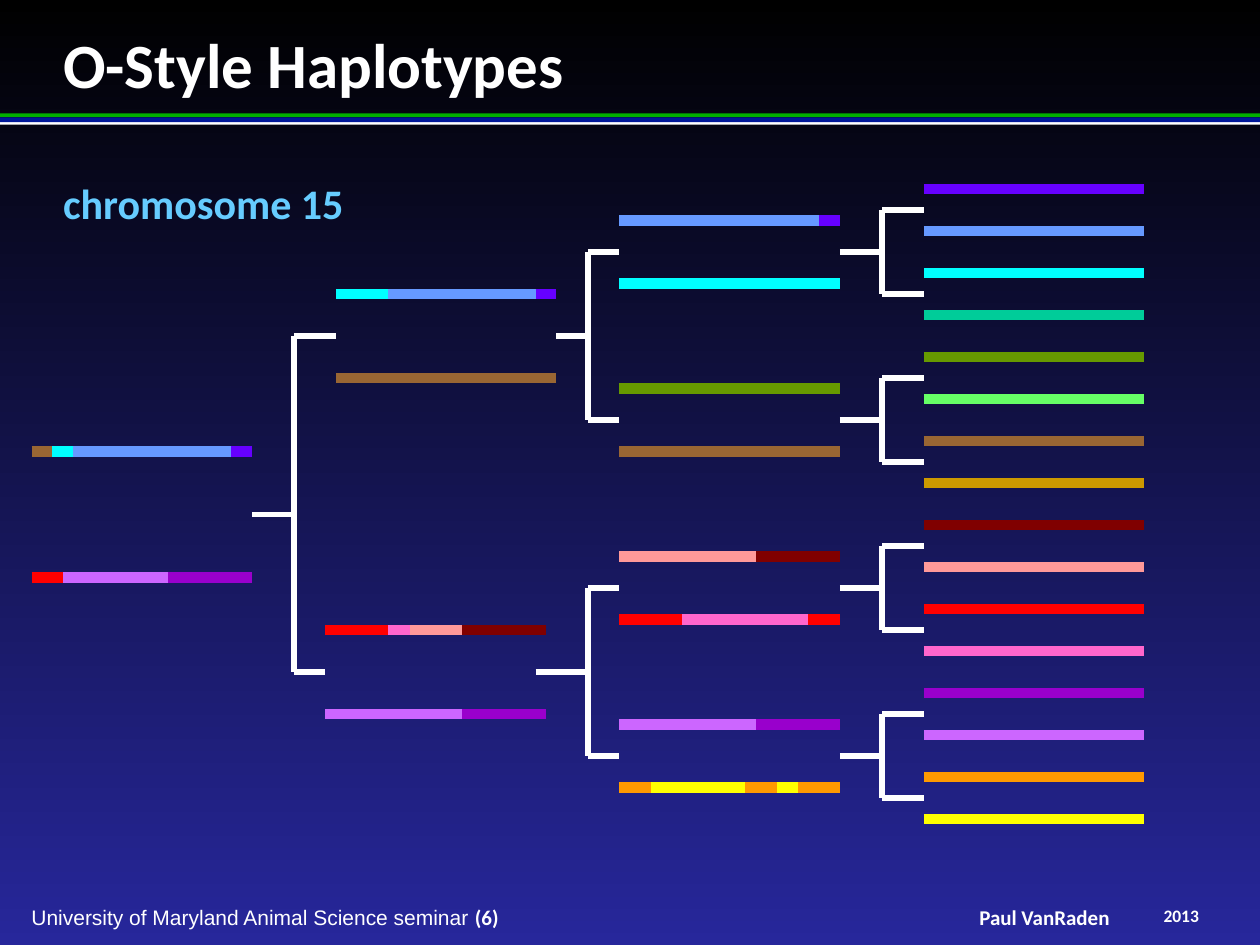
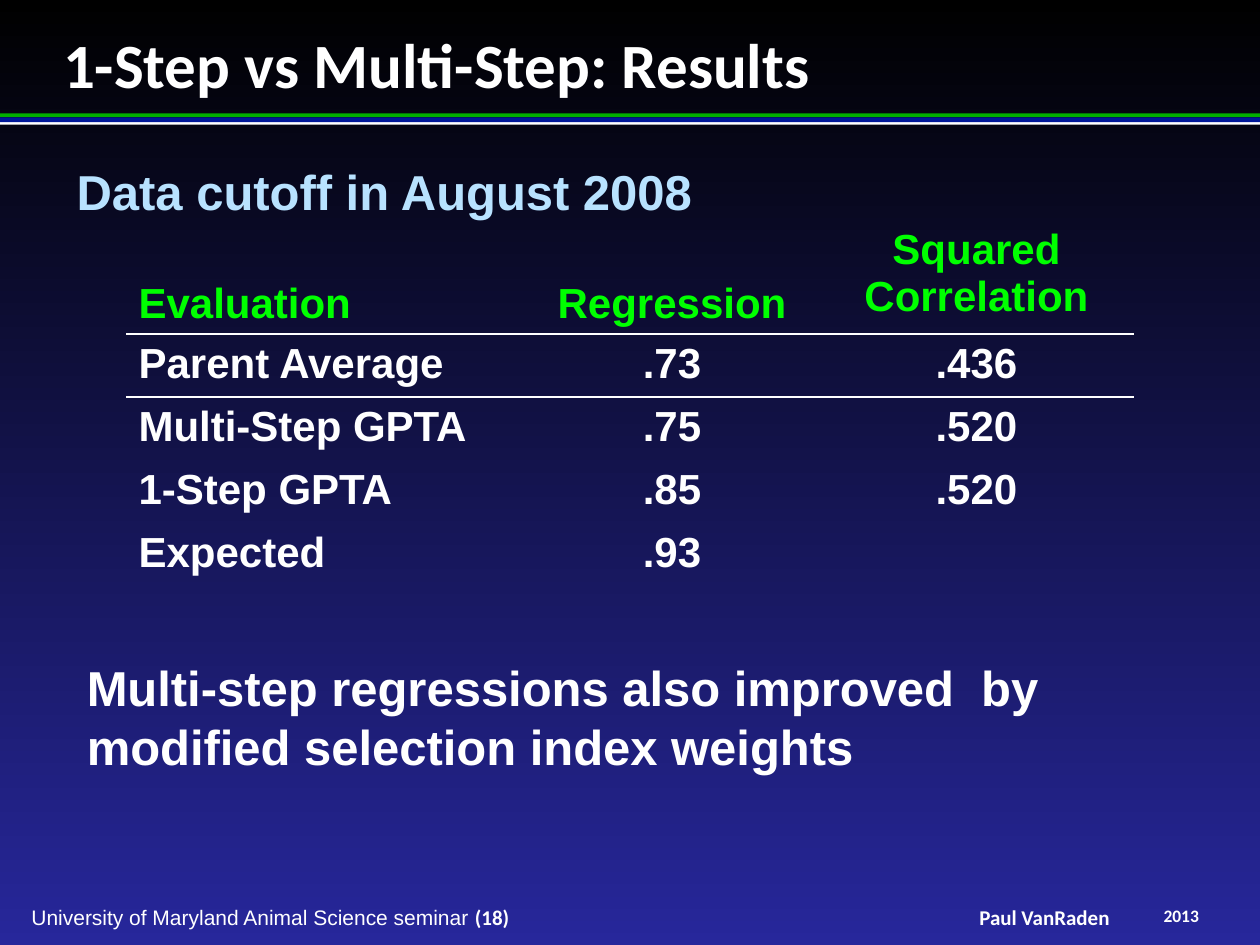
import pptx
import pptx.util
import pptx.dml.color
import pptx.enum.dml
import pptx.enum.shapes
import pptx.enum.text
import lxml.etree

Pt = pptx.util.Pt
rgb = pptx.dml.color.RGBColor.from_string
ALIGN = pptx.enum.text.PP_ALIGN
ANCHOR = pptx.enum.text.MSO_ANCHOR
DRAWING_NS = "http://schemas.openxmlformats.org/drawingml/2006/main"
NO_STYLE_NO_GRID = "{2D5ABB26-0587-4C30-8999-92F81FD0307C}"

WHITE = "FFFFFF"
LIME = "00FF00"
VIOLET, BLUE, CYAN, TEAL = "6600FF", "6699FF", "00FFFF", "00CC99"
OLIVE, GREEN, BROWN, OCHRE = "669900", "66FF66", "996633", "CC9900"
MAROON, SALMON, RED, PINK = "800000", "FF9999", "FF0000", "FF66CC"
PURPLE, ORCHID, ORANGE, YELLOW = "9900CC", "CC66FF", "FF9900", "FFFF00"


def style_text(frame, size, colour, font="Arial", bold=True, align=ALIGN.LEFT):
    for paragraph in frame.paragraphs:
        paragraph.alignment = align
        for span in paragraph.runs:
            span.font.size = Pt(size)
            span.font.name = font
            span.font.bold = bold
            span.font.color.rgb = rgb(colour)


def add_line(slide, x1, y1, x2, y2, colour, width):
    line = slide.shapes.add_connector(
        pptx.enum.shapes.MSO_CONNECTOR.STRAIGHT, Pt(x1), Pt(y1), Pt(x2), Pt(y2))
    line.line.color.rgb = rgb(colour)
    line.line.width = Pt(width)
    lxml.etree.SubElement(line._element.spPr, f"{{{DRAWING_NS}}}effectLst")


deck = pptx.Presentation()
deck.slide_width, deck.slide_height = Pt(720), Pt(540)

# Background, title, bands and footer shared by the slides
background = deck.slide_master.background.fill
background.gradient()
background.gradient_angle = 270
for stop, colour in zip(background.gradient_stops, ("000000", "27279B")):
    stop.color.rgb = rgb(colour)

bands = [(64.8, 2.2, "01AF00"), (69.1, 2.2, WHITE), (67, 2.8, "001799")]
slides = []
for title_text, title_height, number in (
        ("O-Style Haplotypes\nchromosome 15", 116.6, 6),
        ("1-Step vs Multi-Step: Results", 43.2, 18)):
    slide = deck.slides.add_slide(deck.slide_layouts[5])
    slides.append(slide)

    for top, height, colour in bands:
        band = slide.shapes.add_shape(
            pptx.enum.shapes.MSO_SHAPE.RECTANGLE, 0, Pt(top), Pt(720), Pt(height))
        band.shadow.inherit = False
        band.fill.solid()
        band.fill.fore_color.rgb = rgb(colour)
        band.line.fill.background()

    title = slide.shapes.title
    title.left, title.top = Pt(36), Pt(14.4)
    title.width, title.height = Pt(648), Pt(title_height)
    frame = title.text_frame
    frame.text = title_text
    frame.auto_size = pptx.enum.text.MSO_AUTO_SIZE.NONE
    frame.vertical_anchor = ANCHOR.TOP
    frame.margin_left = frame.margin_right = frame.margin_top = frame.margin_bottom = 0
    style_text(frame, 36, WHITE, "Calibri")

    for left, top, width, height, text, size, font, bold, align in (
            (18, 517, 376, 14.4, "University of Maryland Animal Science seminar ",
             12, "Arial", False, ALIGN.LEFT),
            (553.7, 517, 86.4, 14.4, "Paul VanRaden", 12, "Calibri", True, ALIGN.CENTER),
            (653, 517, 44, 12.2, "2013", 10, "Calibri", True, ALIGN.CENTER)):
        box = slide.shapes.add_textbox(Pt(left), Pt(top), Pt(width), Pt(height))
        frame = box.text_frame
        frame.word_wrap = True
        frame.vertical_anchor = ANCHOR.MIDDLE
        frame.margin_left = frame.margin_right = frame.margin_top = frame.margin_bottom = 0
        frame.text = text
        if align == ALIGN.LEFT:
            frame.paragraphs[0].add_run().text = f"({number})"
        style_text(frame, size, WHITE, font, bold, align)
        if align == ALIGN.LEFT:
            page_number = frame.paragraphs[0].runs[1]
            page_number.font.name = "Calibri"
            page_number.font.bold = True

pedigree_slide, results_slide = slides

# Slide 1: pedigree of haplotypes
subtitle = pedigree_slide.shapes.title.text_frame.paragraphs[1]
subtitle.space_before = Pt(44)
subtitle.runs[0].font.size = Pt(24)
subtitle.runs[0].font.color.rgb = rgb("66CCFF")

# Brackets: stem start, stem y, spine x, (arm end, arm y) twice
brackets = [(144, 294, 168, (192, 192), (186, 384)),
            (318, 192, 336, (354, 144), (354, 240)),
            (306, 384, 336, (354, 336), (354, 432))]
for middle in range(144, 433, 96):
    brackets.append((480, middle, 504, (528, middle - 24), (528, middle + 24)))

for stem_x, stem_y, spine_x, upper, lower in brackets:
    add_line(pedigree_slide, stem_x, stem_y, spine_x, stem_y, WHITE, 3)
    add_line(pedigree_slide, spine_x, upper[1], spine_x, lower[1], WHITE, 3)
    for arm_x, arm_y in (upper, lower):
        add_line(pedigree_slide, spine_x, arm_y, arm_x, arm_y, WHITE, 3)

# Haplotypes: left, y, then each segment's colour and right end
haplotypes = [
    (18, 258, [(BROWN, 30), (CYAN, 42), (BLUE, 132), (VIOLET, 144)]),
    (18, 330, [(RED, 36), (ORCHID, 96), (PURPLE, 144)]),
    (192, 168, [(CYAN, 222), (BLUE, 306), (VIOLET, 318)]),
    (192, 216, [(BROWN, 318)]),
    (186, 360, [(RED, 222), (PINK, 234), (SALMON, 264), (MAROON, 312)]),
    (186, 408, [(ORCHID, 264), (PURPLE, 312)]),
    (354, 126, [(BLUE, 468), (VIOLET, 480)]),
    (354, 162, [(CYAN, 480)]),
    (354, 222, [(OLIVE, 480)]),
    (354, 258, [(BROWN, 480)]),
    (354, 318, [(SALMON, 432), (MAROON, 480)]),
    (354, 354, [(RED, 390), (PINK, 462), (RED, 480)]),
    (354, 414, [(ORCHID, 432), (PURPLE, 480)]),
    (354, 450, [(ORANGE, 372), (YELLOW, 426), (ORANGE, 444), (YELLOW, 456), (ORANGE, 480)]),
]
founders = [VIOLET, BLUE, CYAN, TEAL, OLIVE, GREEN, BROWN, OCHRE,
            MAROON, SALMON, RED, PINK, PURPLE, ORCHID, ORANGE, YELLOW]
for index, colour in enumerate(founders):
    haplotypes.append((528, 108 + 24 * index, [(colour, 654)]))

for start, y, segments in haplotypes:
    for colour, end in segments:
        add_line(pedigree_slide, start, y, end, y, colour, 6)
        start = end

# Slide 2: results table and remarks
rows = [("Evaluation", "Regression", "Squared Correlation"),
        ("Parent Average", ".73", ".436"),
        ("Multi-Step GPTA", ".75", ".520"),
        ("1-Step GPTA", ".85", ".520"),
        ("Expected", ".93", "")]
table = results_slide.shapes.add_table(
    len(rows), 3, Pt(72), Pt(126), Pt(576), Pt(208.8)).table
table.first_row = table.horz_banding = False
table._tbl.tblPr.find(f"{{{DRAWING_NS}}}tableStyleId").text = NO_STYLE_NO_GRID
for column, width in zip(table.columns, (228, 168, 180)):
    column.width = Pt(width)

for row_index, values in enumerate(rows):
    table.rows[row_index].height = Pt(36 if row_index else 64.8)
    for column_index, value in enumerate(values):
        cell = table.cell(row_index, column_index)
        cell.text = value
        cell.fill.background()
        cell.vertical_anchor = ANCHOR.TOP
        if row_index == 0 and column_index < 2:
            cell.vertical_anchor = ANCHOR.BOTTOM
        style_text(cell.text_frame, 24, WHITE if row_index else LIME,
                   align=ALIGN.CENTER if column_index else ALIGN.LEFT)
        if row_index < 2:
            border = lxml.etree.fromstring(
                f'<a:lnB xmlns:a="{DRAWING_NS}" w="12700"><a:solidFill>'
                f'<a:srgbClr val="{WHITE}"/></a:solidFill></a:lnB>')
            cell._tc.get_or_add_tcPr().insert(0, border)

for left, top, width, height, text, colour in (
        (36.7, 88.6, 368.6, 41, "Data cutoff in August 2008", "B8E2FF"),
        (42.5, 372.2, 646.6, 74.9,
         "Multi-step regressions also improved  by modified selection index weights", WHITE)):
    box = results_slide.shapes.add_textbox(Pt(left), Pt(top), Pt(width), Pt(height))
    box.text_frame.word_wrap = True
    box.text_frame.text = text
    style_text(box.text_frame, 28, colour)

deck.save("out.pptx")
